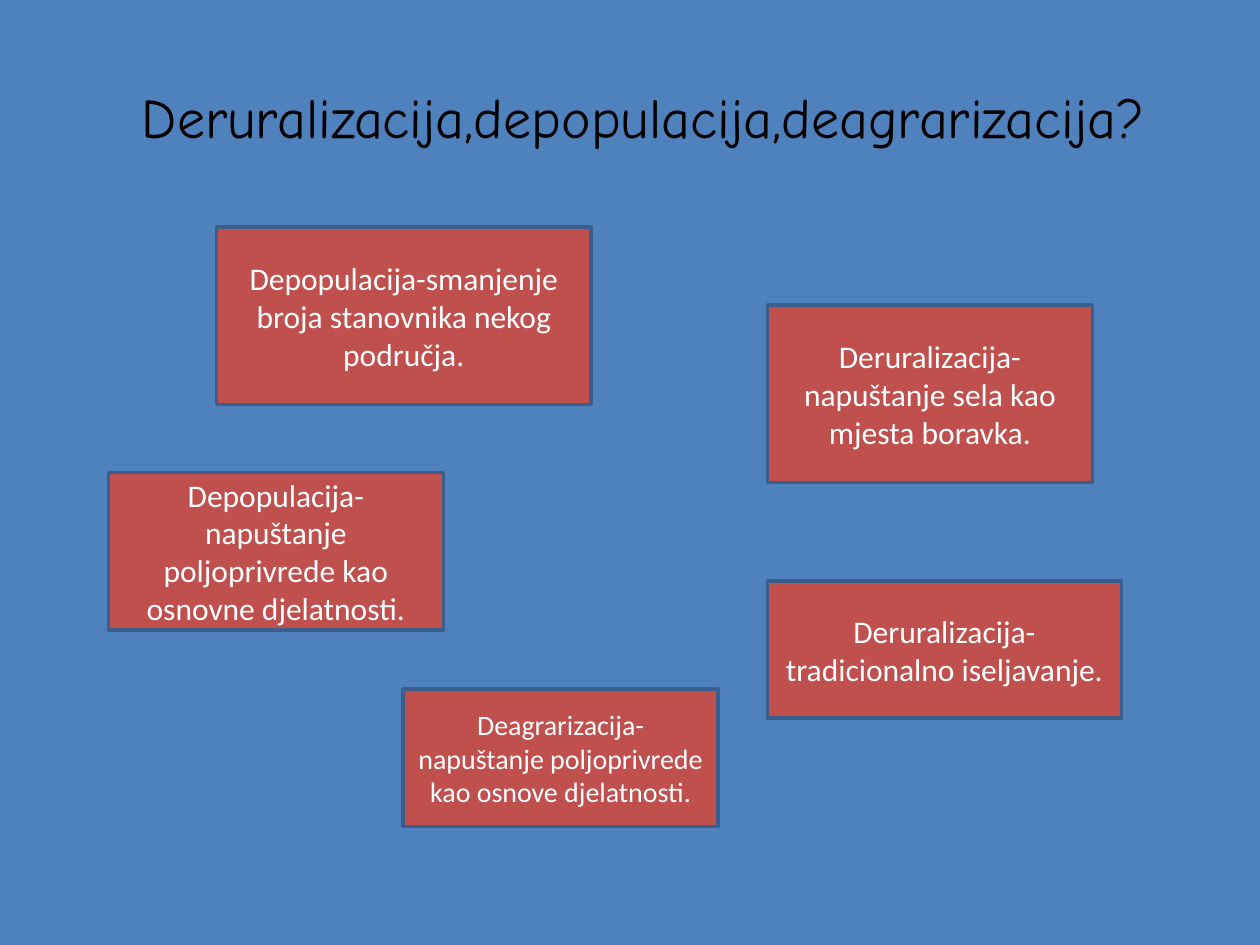
import pptx
import pptx.util
import pptx.dml.color
import pptx.enum.shapes
import pptx.enum.text

Inches = pptx.util.Inches
Pt = pptx.util.Pt

COLORS = {
    "background": "4F81BD",
    "card": "C0504D",
    "border": "3A5F8C",
    "title": "000000",
    "card_text": "FFFFFF",
}

DEFINITIONS = [
    ((0.86, 3.75, 2.66, 1.25), "Depopulacija-napuštanje poljoprivrede kao osnovne djelatnosti.", 18),
    ((6.09, 2.42, 2.58, 1.41), "Deruralizacija-napuštanje sela kao mjesta boravka.", 18),
    ((6.09, 4.61, 2.81, 1.09), "Deruralizacija-tradicionalno iseljavanje.", 18),
    ((3.2, 5.47, 2.5, 1.09), "Deagrarizacija-napuštanje poljoprivrede kao osnove djelatnosti.", 16),
    ((1.72, 1.8, 2.97, 1.41), "Depopulacija-smanjenje broja stanovnika nekog područja.", 18),
]


def color(name):
    return pptx.dml.color.RGBColor.from_string(COLORS[name])


def write_centred(shape, text, size, font_name, color_name):
    frame = shape.text_frame
    frame.word_wrap = True
    frame.vertical_anchor = pptx.enum.text.MSO_ANCHOR.MIDDLE
    paragraph = frame.paragraphs[0]
    paragraph.alignment = pptx.enum.text.PP_ALIGN.CENTER
    run = paragraph.add_run()
    run.text = text
    run.font.size = Pt(size)
    run.font.name = font_name
    run.font.color.rgb = color(color_name)


def place_title(slide, box, text):
    title = slide.shapes.title
    title.left, title.top, title.width, title.height = map(Inches, box)
    write_centred(title, text, 32, "Comic Neue", "title")


def add_definition(slide, box, text, size):
    shape = slide.shapes.add_shape(
        pptx.enum.shapes.MSO_SHAPE.ACTION_BUTTON_CUSTOM, *map(Inches, box)
    )
    shape.shadow.inherit = False
    shape.fill.solid()
    shape.fill.fore_color.rgb = color("card")
    shape.line.color.rgb = color("border")
    shape.line.width = Pt(2)
    write_centred(shape, text, size, "Calibri", "card_text")


def main():
    presentation = pptx.Presentation()
    presentation.slide_width = Inches(10)
    presentation.slide_height = Inches(7.5)
    slide = presentation.slides.add_slide(presentation.slide_layouts[5])
    slide.background.fill.solid()
    slide.background.fill.fore_color.rgb = color("background")

    place_title(slide, (0.5, 0.3, 9.22, 1.25), "Deruralizacija,depopulacija,deagrarizacija?")
    for box, text, size in DEFINITIONS:
        add_definition(slide, box, text, size)

    presentation.save("out.pptx")


if __name__ == "__main__":
    main()
